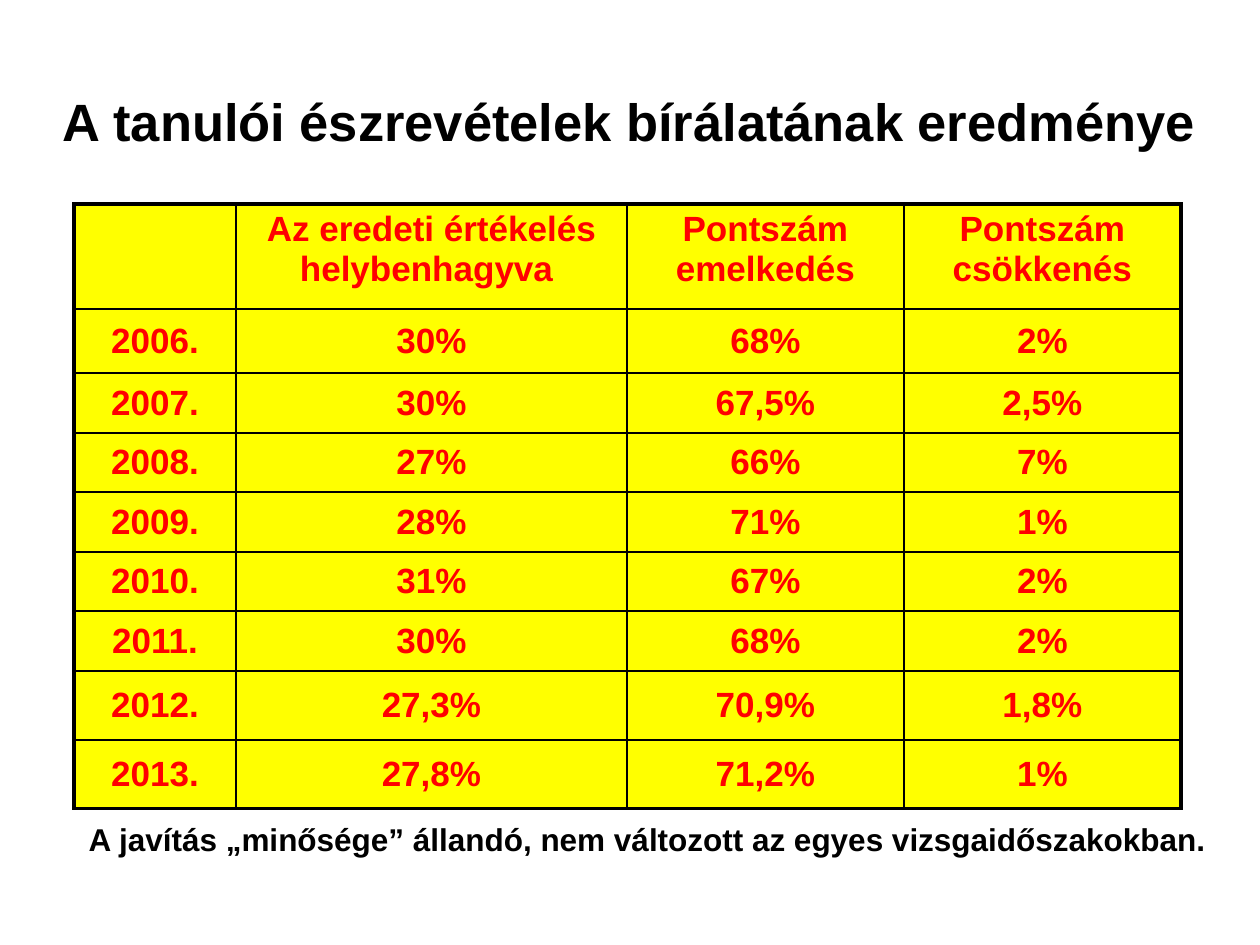
from lxml.etree import SubElement
from pptx import Presentation
from pptx.dml.color import RGBColor
from pptx.enum.text import MSO_ANCHOR, PP_ALIGN
from pptx.oxml.ns import qn
from pptx.util import Emu, Pt

PX = 914400 / 126
BLACK = RGBColor(0, 0, 0)
RED = RGBColor(255, 0, 0)
YELLOW = RGBColor(255, 255, 0)
THIN, THICK = Pt(1), Pt(2.25)

COLUMN_WIDTHS = [162, 391, 277, 277]
ROW_HEIGHTS = [105, 64, 60, 59, 60, 59, 60, 69, 69]
RESULTS = [
    ["", "Az eredeti értékelés helybenhagyva ", "Pontszám emelkedés", "Pontszám csökkenés"],
    ["2006.", "30%", "68%", "2%"],
    ["2007.", "30%", "67,5%", "2,5%"],
    ["2008.", "27%", "66%", "7%"],
    ["2009.", "28%", "71%", "1%"],
    ["2010.", "31%", "67%", "2%"],
    ["2011.", "30%", "68%", "2%"],
    ["2012.", "27,3%", "70,9%", "1,8%"],
    ["2013.", "27,8%", "71,2%", "1%"],
]


def px(length):
    """Turn pixels into EMU."""
    return Emu(round(length * PX))


def write_text(text_frame, text, size, color):
    """Write one centred bold paragraph."""
    text_frame.text = text
    para = text_frame.paragraphs[0]
    para.alignment = PP_ALIGN.CENTER
    for span in para.runs:
        span.font.name = "Arial"
        span.font.size = Pt(size)
        span.font.bold = True
        span.font.color.rgb = color
    return para


def add_line_of_text(page, box, text, size, anchor, line_spacing=None):
    """Place a centred black text in the given box."""
    text_frame = page.shapes.add_textbox(*map(px, box)).text_frame
    text_frame.word_wrap = True
    text_frame.vertical_anchor = anchor
    para = write_text(text_frame, text, size, BLACK)
    if line_spacing:
        para.line_spacing = line_spacing


def set_borders(cell, widths):
    """Draw the left, right, top and bottom borders of a cell."""
    properties = cell._tc.get_or_add_tcPr()
    for side, width in zip("LRTB", widths):
        line = SubElement(properties, qn(f"a:ln{side}"), w=str(width))
        fill = SubElement(line, qn("a:solidFill"))
        SubElement(fill, qn("a:srgbClr"), val=str(BLACK))


def add_results_table(page, left, top):
    """Place the yearly results with a thick outer frame."""
    last_row, last_column = len(ROW_HEIGHTS) - 1, len(COLUMN_WIDTHS) - 1
    box = left, top, sum(COLUMN_WIDTHS), sum(ROW_HEIGHTS)
    table = page.shapes.add_table(last_row + 1, last_column + 1, *map(px, box)).table
    table.first_row = table.horz_banding = False
    for column, width in zip(table.columns, COLUMN_WIDTHS):
        column.width = px(width)
    for row, height in zip(table.rows, ROW_HEIGHTS):
        row.height = px(height)
    for r, values in enumerate(RESULTS):
        for c, value in enumerate(values):
            cell = table.cell(r, c)
            outer = c == 0, c == last_column, r == 0, r == last_row
            set_borders(cell, [THICK if edge else THIN for edge in outer])
            cell.fill.solid()
            cell.fill.fore_color.rgb = YELLOW
            cell.vertical_anchor = MSO_ANCHOR.MIDDLE if r else MSO_ANCHOR.TOP
            write_text(cell.text_frame, value, 20, RED)


def main():
    """Build and save the deck."""
    deck = Presentation()
    deck.slide_width, deck.slide_height = px(1260), px(945)
    page = deck.slides.add_slide(deck.slide_layouts[6])
    add_line_of_text(page, (34, 76, 1191, 89),
                     "A tanulói észrevételek bírálatának eredménye", 30, MSO_ANCHOR.MIDDLE)
    add_line_of_text(page, (35, 818, 1225, 47),
                     "A javítás „minősége” állandó, nem változott az egyes vizsgaidőszakokban.",
                     18, MSO_ANCHOR.TOP, 0.9)
    add_results_table(page, 74, 204)
    deck.save("out.pptx")


if __name__ == "__main__":
    main()
